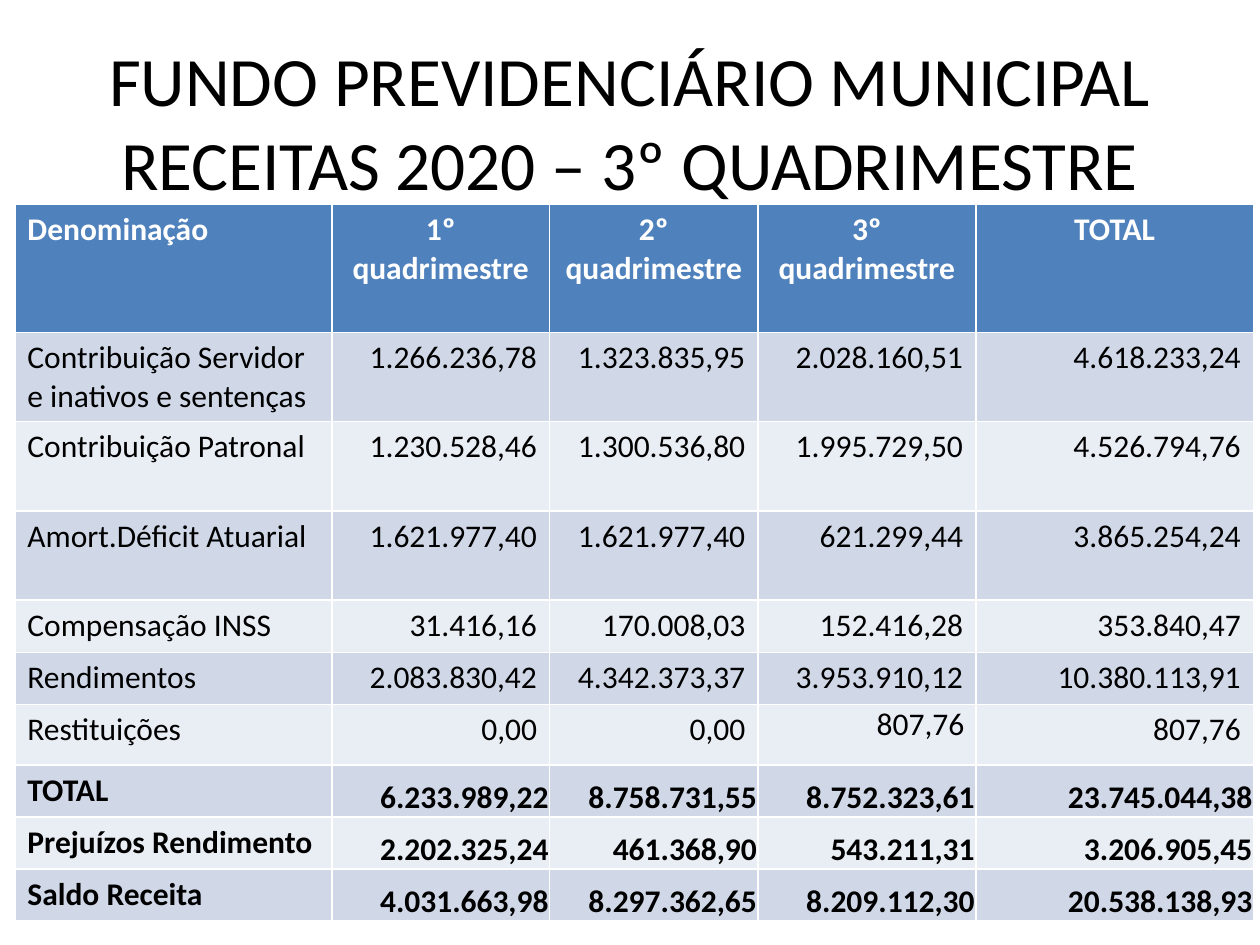
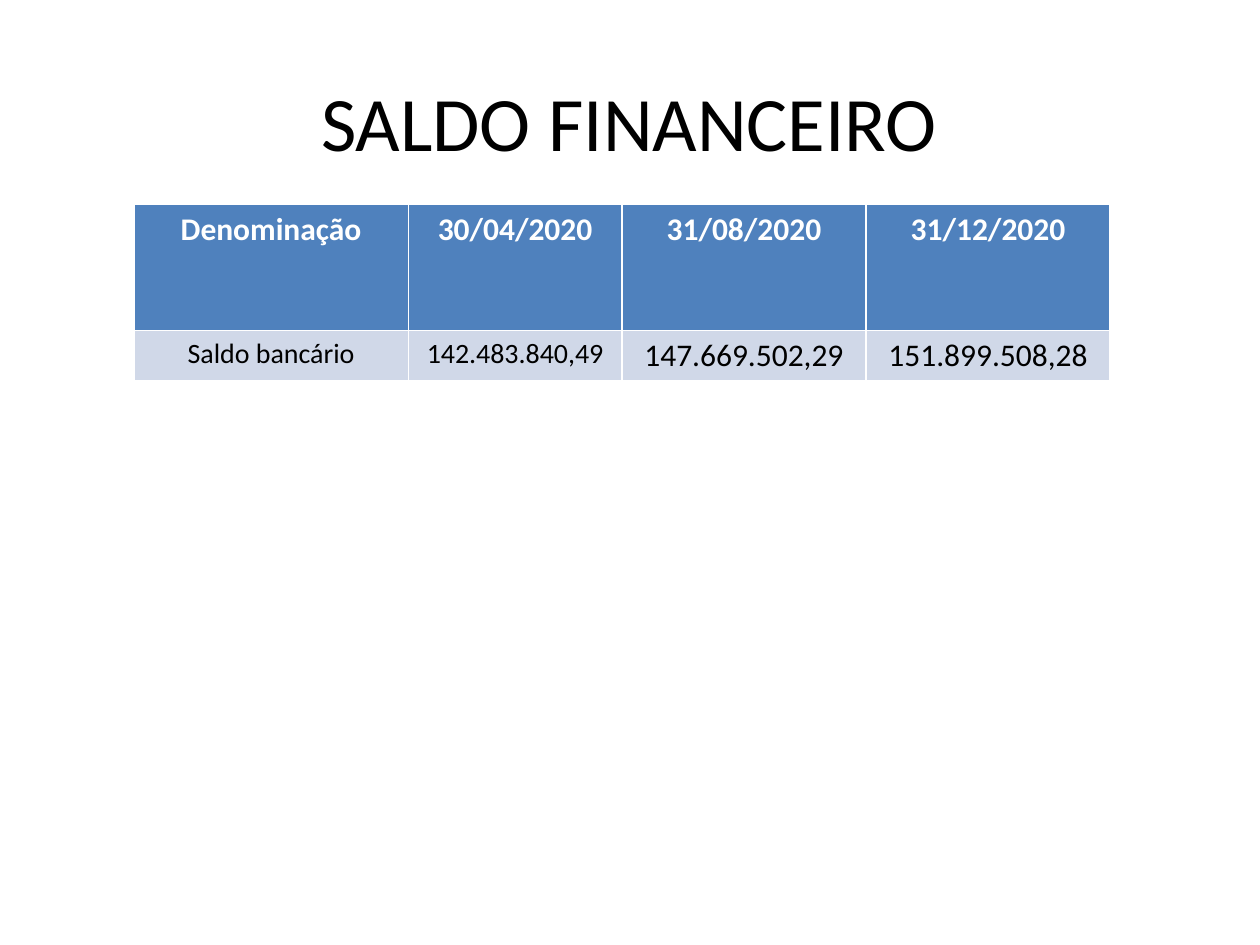
from dataclasses import dataclass

from pptx import Presentation
from pptx.dml.color import RGBColor
from pptx.enum.text import MSO_ANCHOR, PP_ALIGN
from pptx.slide import Slide
from pptx.table import Table
from pptx.text.text import TextFrame
from pptx.util import Cm, Pt

BLACK = RGBColor(0x00, 0x00, 0x00)
WHITE = RGBColor(0xFF, 0xFF, 0xFF)
HEADER_BLUE = RGBColor(0x4F, 0x81, 0xBD)
BANDS = (RGBColor(0xD0, 0xD8, 0xE8), RGBColor(0xE9, 0xED, 0xF4))
FONT = "Calibri"
LEFT, CENTER, RIGHT = PP_ALIGN.LEFT, PP_ALIGN.CENTER, PP_ALIGN.RIGHT

TITLE_TOP, TITLE_HEIGHT = 0.76, 3.35
TABLE_TOP = 4.12
TIGHT = 0.02


@dataclass(frozen=True)
class TableSpec:
    """Lengths are in centimetres; the first row is the header."""
    left: float
    col_widths: tuple[float, ...]
    row_heights: tuple[float, ...]
    rows: tuple[tuple[str, ...], ...]
    header_aligns: tuple[PP_ALIGN, ...]
    body_aligns: tuple[PP_ALIGN, ...]
    body_sizes: tuple[float, ...]
    summary_rows: int = 0


RECEITAS = TableSpec(
    left=0.3,
    col_widths=(6.39, 4.39, 4.2, 4.39, 5.6),
    row_heights=(2.58, 1.8, 1.8, 1.8, 1.05, 1.05, 1.22, 1.05, 1.05, 1.05),
    rows=(
        ("Denominação", "1º quadrimestre", "2º quadrimestre", "3º\nquadrimestre", "TOTAL"),
        ("Contribuição Servidor e inativos e sentenças",
         "1.266.236,78", "1.323.835,95", "2.028.160,51", "4.618.233,24"),
        ("Contribuição Patronal", "1.230.528,46", "1.300.536,80", "1.995.729,50", "4.526.794,76"),
        ("Amort.Déficit Atuarial", "1.621.977,40", "1.621.977,40", "621.299,44", "3.865.254,24"),
        ("Compensação INSS", "31.416,16", "170.008,03", "152.416,28", "353.840,47"),
        ("Rendimentos", "2.083.830,42", "4.342.373,37", "3.953.910,12", "10.380.113,91"),
        ("Restituições", "0,00", "0,00", "807,76", "807,76"),
        ("TOTAL", "6.233.989,22", "8.758.731,55", "8.752.323,61", "23.745.044,38"),
        ("Prejuízos Rendimento", "2.202.325,24", "461.368,90", "543.211,31", "3.206.905,45"),
        ("Saldo Receita", "4.031.663,98", "8.297.362,65", "8.209.112,30", "20.538.138,93"),
    ),
    header_aligns=(LEFT,) + (CENTER,) * 4,
    body_aligns=(LEFT,) + (RIGHT,) * 4,
    body_sizes=(18,) * 5,
    summary_rows=3,
)

SALDO = TableSpec(
    left=2.7,
    col_widths=(5.53, 4.31, 4.92, 4.92),
    row_heights=(2.54, 1.02),
    rows=(
        ("Denominação", "30/04/2020", "31/08/2020", "31/12/2020"),
        ("Saldo bancário", "142.483.840,49", "147.669.502,29", "151.899.508,28"),
    ),
    header_aligns=(CENTER,) * 4,
    body_aligns=(CENTER,) * 4,
    body_sizes=(16, 16, 18, 18),
)


def write(tf: TextFrame, text: str, *, size: float, color: RGBColor = BLACK,
          bold: bool = False, align: PP_ALIGN = LEFT) -> None:
    """Each newline starts a paragraph; a vertical tab breaks the line."""
    tf.text = text
    for p in tf.paragraphs:
        p.alignment = align
        for r in p.runs:
            r.font.name = FONT
            r.font.size = Pt(size)
            r.font.bold = bold
            r.font.color.rgb = color


def add_title(s: Slide, text: str, left: float, width: float, size: float) -> None:
    sp = s.shapes.add_textbox(Cm(left), Cm(TITLE_TOP), Cm(width), Cm(TITLE_HEIGHT))
    tf = sp.text_frame
    tf.word_wrap = True
    tf.vertical_anchor = MSO_ANCHOR.MIDDLE
    write(tf, text, size=size, align=CENTER)


def set_margins(cell, right: float) -> None:
    cell.margin_left = cell.margin_top = Cm(TIGHT)
    cell.margin_right = Cm(right)
    cell.margin_bottom = 0


def add_table(s: Slide, spec: TableSpec) -> Table:
    n_rows, n_cols = len(spec.rows), len(spec.col_widths)
    table = s.shapes.add_table(
        n_rows, n_cols, Cm(spec.left), Cm(TABLE_TOP),
        Cm(sum(spec.col_widths)), Cm(sum(spec.row_heights))).table
    for column, width in zip(table.columns, spec.col_widths):
        column.width = Cm(width)
    for row, height in zip(table.rows, spec.row_heights):
        row.height = Cm(height)

    for i, texts in enumerate(spec.rows):
        header = i == 0
        summary = i >= n_rows - spec.summary_rows
        aligns = spec.header_aligns if header else spec.body_aligns
        for j, text in enumerate(texts):
            cell = table.cell(i, j)
            cell.fill.solid()
            cell.fill.fore_color.rgb = HEADER_BLUE if header else BANDS[(i - 1) % 2]
            write(cell.text_frame, text, size=18 if header else spec.body_sizes[j],
                  color=WHITE if header else BLACK, bold=header or summary, align=aligns[j])
            if summary and j > 0:
                set_margins(cell, right=TIGHT)
                cell.vertical_anchor = MSO_ANCHOR.BOTTOM
    return table


def main() -> None:
    prs = Presentation()
    prs.slide_width, prs.slide_height = Cm(25.4), Cm(19.05)
    blank = prs.slide_layouts[6]

    s = prs.slides.add_slide(blank)
    add_title(s, "FUNDO PREVIDENCIÁRIO MUNICIPAL\vRECEITAS 2020 – 3º QUADRIMESTRE",
              left=1.27, width=22.86, size=39.6)
    receitas = add_table(s, RECEITAS)
    restituicoes_3o = receitas.cell(6, 3)
    set_margins(restituicoes_3o, right=0.23)

    s = prs.slides.add_slide(blank)
    add_title(s, "SALDO FINANCEIRO", left=0.89, width=23.6, size=44)
    add_table(s, SALDO)

    prs.save("out.pptx")


if __name__ == "__main__":
    main()
